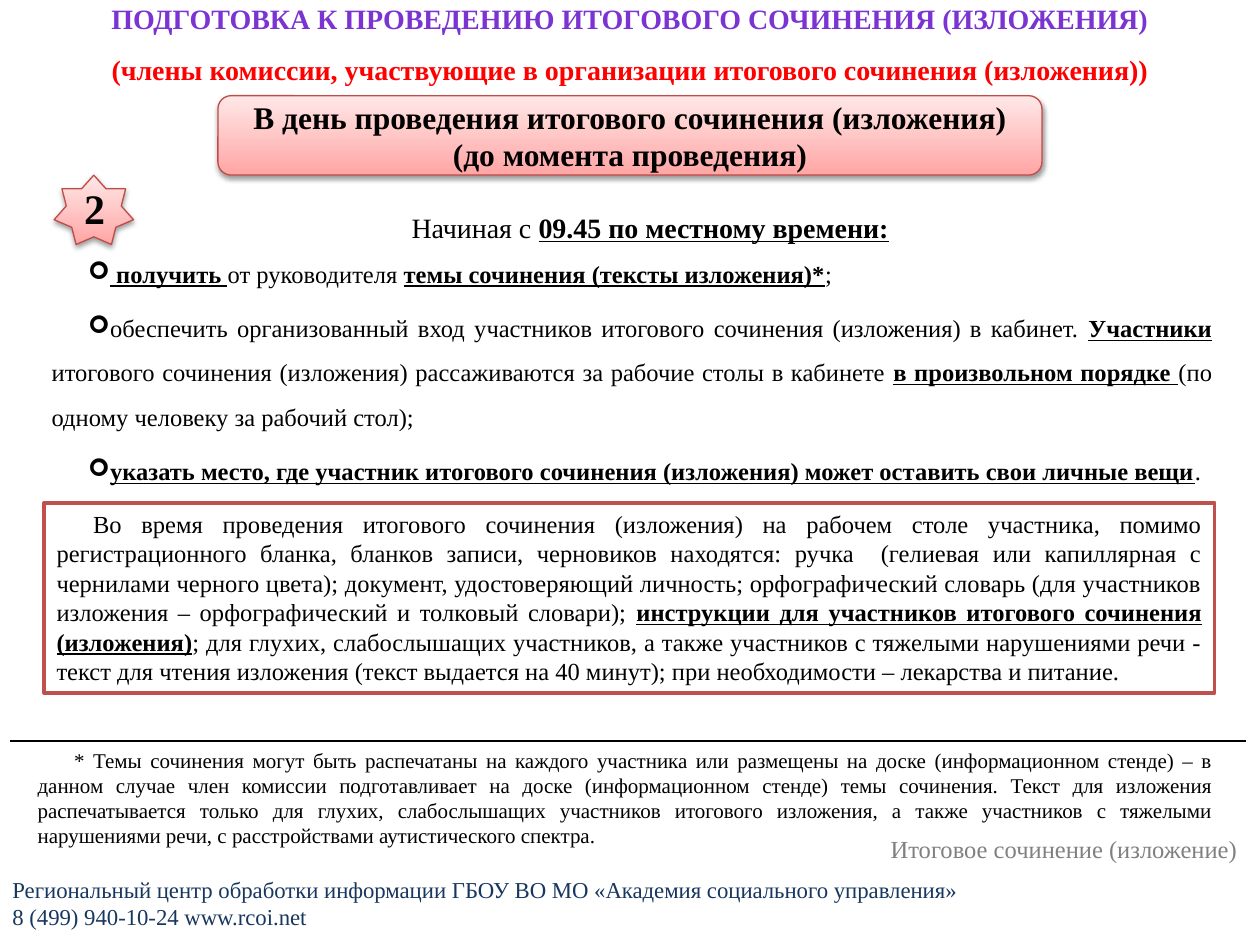
"""Builds the slide on preparing for the final essay (exposition)."""
from lxml.etree import SubElement
from pptx import Presentation
from pptx.dml.color import RGBColor
from pptx.enum.shapes import MSO_CONNECTOR, MSO_SHAPE as SHAPE
from pptx.enum.text import MSO_ANCHOR as ANCHOR, MSO_AUTO_SIZE, PP_ALIGN as ALIGN
from pptx.oxml.ns import qn
from pptx.util import Inches, Pt

STRONG = {"bold": True, "underline": True}
BOLD = {"bold": True}
CENTER = {"alignment": ALIGN.CENTER}
JUSTIFY = {"alignment": ALIGN.JUSTIFY}
LIST_ITEM = {**JUSTIFY, "line_spacing": 1.5, "space_after": Pt(6)}


def color(value):
    return RGBColor.from_string(value)


def apply(target, values):
    for key, value in values.items():
        setattr(target, key, value)


class SlideBuilder:
    font_name = "Times New Roman"
    first_indent = Inches(0.29)

    def __init__(self, slide):
        self.slide = slide

    def place(self, shape, box):
        apply(shape, dict(zip(("left", "top", "width", "height"), map(Inches, box))))
        return shape

    def frame(self, shape, anchor=ANCHOR.TOP):
        frame = shape.text_frame
        apply(frame, {"word_wrap": True, "auto_size": MSO_AUTO_SIZE.NONE,
                      "vertical_anchor": anchor})
        return frame

    def paragraph(self, frame, runs, size, layout, ink="000000", indent=False, bullet=None):
        paragraph = frame.paragraphs[0]
        if paragraph.runs:
            paragraph = frame.add_paragraph()
        properties = paragraph._p.get_or_add_pPr()
        properties.set("marL", "0")
        properties.set("indent", str(self.first_indent if indent else 0))
        if bullet:
            SubElement(properties, qn("a:buFont")).set("typeface", "Wingdings")
            SubElement(properties, qn("a:buChar")).set("char", bullet)
        else:
            SubElement(properties, qn("a:buNone"))
        apply(paragraph, {"space_before": Pt(0), **layout})
        for text, style in runs:
            run_ink = style.get("ink", ink)
            emphasis = {key: value for key, value in style.items() if key != "ink"}
            for number, line in enumerate(text.split("\n")):
                if number:
                    paragraph.add_line_break()
                if line:
                    run = paragraph.add_run()
                    run.text = line
                    apply(run.font, {"name": self.font_name, "size": Pt(size), **emphasis})
                    run.font.color.rgb = color(run_ink)

    def title(self, box, runs):
        frame = self.frame(self.place(self.slide.shapes.title, box), ANCHOR.MIDDLE)
        self.paragraph(frame, runs, 16, {**CENTER, "line_spacing": 1.5})

    def body(self, box, heading, items):
        frame = self.frame(self.place(self.slide.placeholders[1], box))
        self.paragraph(frame, heading, 16, CENTER, indent=True)
        for item in items:
            self.paragraph(frame, item, 14, LIST_ITEM, indent=True, bullet="➢")

    def text(self, box, text, size, layout, ink="000000", indent=False):
        frame = self.frame(self.slide.shapes.add_textbox(*map(Inches, box)))
        self.paragraph(frame, [(text, {})], size, layout, ink, indent)

    def shape(self, kind, box, outline, width):
        shape = self.slide.shapes.add_shape(kind, *map(Inches, box))
        shape.shadow.inherit = False
        shape.line.color.rgb = color(outline)
        shape.line.width = Pt(width)
        return shape

    def badge(self, kind, box, lines, size):
        badge = self.shape(kind, box, "BF4C48", 0.75)
        badge.fill.gradient()
        badge.fill.gradient_angle = 90
        for stop, tone in zip(badge.fill.gradient_stops, ("FFA6A5", "FFE7E7")):
            stop.color.rgb = color(tone)
        for position, stop in enumerate(badge.fill.gradient_stops):
            stop.position = position
        effects = badge._element.spPr.find(qn("a:effectLst"))
        shadow = SubElement(effects, qn("a:outerShdw"), blurRad=str(Pt(3.1)),
                            dist=str(Pt(1.6)), dir="5400000", rotWithShape="0")
        tint = SubElement(shadow, qn("a:srgbClr"), val="000000")
        SubElement(tint, qn("a:alpha"), val="38000")
        frame = self.frame(badge, ANCHOR.MIDDLE)
        for line in lines:
            self.paragraph(frame, [(line, BOLD)], size, CENTER)

    def panel(self, box, runs):
        panel = self.shape(SHAPE.RECTANGLE, box, "C0504D", 2)
        panel.fill.solid()
        panel.fill.fore_color.rgb = color("FFFFFF")
        self.paragraph(self.frame(panel), runs, 14, JUSTIFY, indent=True)

    def rule(self, left, right, top):
        rule = self.slide.shapes.add_connector(
            MSO_CONNECTOR.STRAIGHT, *map(Inches, (left, top, right, top)))
        rule.line.color.rgb = color("000000")
        rule.line.width = Pt(0.75)
        SubElement(rule._element.spPr, qn("a:effectLst"))


def main():
    deck = Presentation()
    apply(deck, {"slide_width": Inches(10), "slide_height": Inches(7.5)})
    page = SlideBuilder(deck.slides.add_slide(deck.slide_layouts[1]))

    page.text((0, 6.9, 8.61, 0.55),
              "Региональный центр обработки информации ГБОУ ВО МО "
              "«Академия социального управления»\n8 (499) 940-10-24 www.rcoi.net",
              13, {"alignment": ALIGN.LEFT}, "17375E")
    page.text((6.97, 6.57, 2.99, 0.34), "Итоговое сочинение (изложение)",
              14, {"alignment": ALIGN.LEFT}, "808080")
    page.title((0.5, -0.07, 9, 0.7), [
        ("ПОДГОТОВКА К ПРОВЕДЕНИЮ ИТОГОВОГО СОЧИНЕНИЯ (ИЗЛОЖЕНИЯ)\n",
         {**BOLD, "ink": "7B34D2"}),
        ("(члены комиссии, участвующие в организации итогового сочинения (изложения))",
         {**BOLD, "ink": "FF0000"}),
    ])
    page.body(
        (0.31, 1.62, 9.41, 4.33),
        [("Начиная с ", {}), ("09.45 по местному времени:", STRONG)],
        [
            [(" получить ", STRONG), ("от руководителя ", {}),
             ("темы сочинения (тексты изложения)*", STRONG), (";", {})],
            [("обеспечить организованный вход участников итогового сочинения "
              "(изложения) в кабинет. ", {}),
             ("Участники", STRONG),
             (" итогового сочинения (изложения) рассаживаются за рабочие столы "
              "в кабинете ", {}),
             ("в произвольном порядке ", STRONG),
             ("(по одному человеку за рабочий стол);", {})],
            [("указать место, где участник итогового сочинения (изложения) "
              "может оставить свои личные вещи", STRONG), (".", {})],
        ])
    page.badge(SHAPE.STAR_7_POINT, (0.43, 1.39, 0.63, 0.55), ["2"], 24)
    page.badge(SHAPE.ROUNDED_RECTANGLE, (1.73, 0.76, 6.54, 0.63),
               ["В день проведения итогового сочинения (изложения)",
                "(до момента проведения)"], 18)
    page.rule(0.08, 9.89, 5.88)
    page.text((0.2, 5.88, 9.53, 0.87),
              "* Темы сочинения могут быть распечатаны на каждого участника или размещены "
              "на доске (информационном стенде) – в данном случае член комиссии "
              "подготавливает на доске (информационном стенде) темы сочинения. Текст для "
              "изложения распечатывается только для глухих, слабослышащих участников "
              "итогового изложения, а также участников с тяжелыми нарушениями речи, "
              "с расстройствами аутистического спектра.",
              12, JUSTIFY, indent=True)
    page.panel((0.35, 3.99, 9.29, 1.51), [
        ("Во время проведения итогового сочинения (изложения) на рабочем столе участника, "
         "помимо регистрационного бланка, бланков записи, черновиков находятся: ручка  "
         "(гелиевая или капиллярная с чернилами черного цвета); документ, удостоверяющий "
         "личность; орфографический словарь (для участников изложения – орфографический "
         "и толковый словари); ", {}),
        ("инструкции для участников итогового сочинения (изложения)", STRONG),
        ("; для глухих, слабослышащих участников, а также участников с тяжелыми "
         "нарушениями речи - текст для чтения изложения (текст выдается на 40 минут); "
         "при необходимости – лекарства и питание.", {}),
    ])
    deck.save("out.pptx")


if __name__ == "__main__":
    main()
